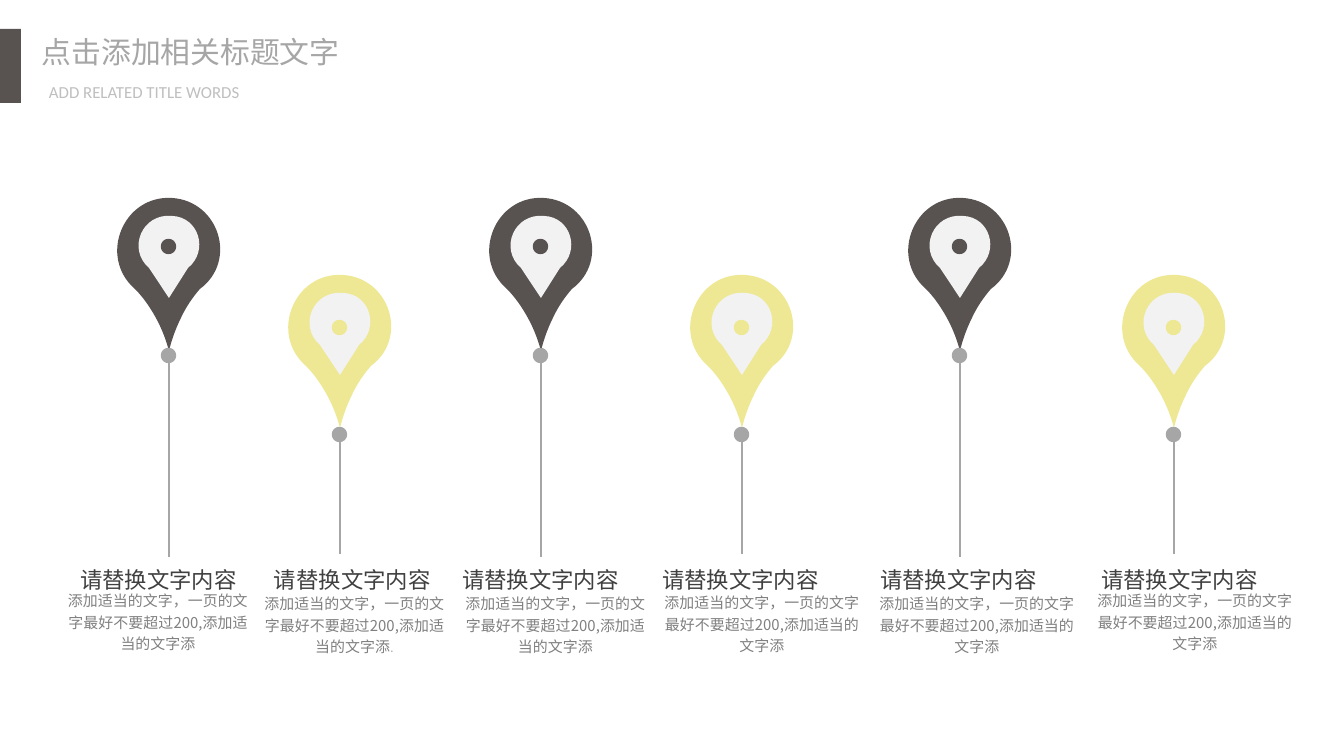
from lxml.etree import SubElement
from pptx import Presentation
from pptx.dml.color import RGBColor
from pptx.enum.shapes import MSO_CONNECTOR, MSO_SHAPE
from pptx.enum.text import MSO_ANCHOR, MSO_AUTO_SIZE, PP_ALIGN
from pptx.oxml.ns import qn
from pptx.util import Pt

SCALE = 914400 / 134.4
COLORS = {
    "dark": "585251", "yellow": "EEE895", "inner": "F2F2F2", "gray": "A6A6A6",
    "subtitle": "BFBFBF", "heading": "404040", "body": "808080",
}
CJK = "Noto Sans CJK SC"
HEADING = "请替换文字内容"
BODY = "添加适当的文字，一页的文字最好不要超过200,添加适当的文字添"

# Outlines: width, height, then a start point followed by segments of
# three points (curve) or one point (line), relative to the top left.
PIN = (102, 153, [
    [(17, 91)],
    [(-20, 59), (5, -3), (54, 0)],
    [(101, 3), (120, 63), (82, 91)],
    [(75, 99), (68, 109), (63, 120)],
    [(58, 130), (54, 141), (51, 153)],
    [(48, 141), (43, 129), (38, 120)],
    [(32, 109), (25, 99), (17, 91)],
])
PIN_CENTER = (61, 82, [
    [(50, 52)],
    [(71, 35), (61, 1), (34, 0)],
    [(4, -3), (-11, 33), (11, 52)],
    [(31, 82)],
    [(50, 52)],
])
DOT = (15, 15, [
    [(13, 2)],
    [(16, 5), (16, 10), (13, 13)],
    [(10, 16), (5, 16), (2, 13)],
    [(-1, 10), (-1, 5), (2, 2)],
    [(5, -1), (10, -1), (13, 2)],
])
# colour, pin top, inner dot top, anchor dot top, stem end
HIGH = ("dark", 198, 239, 348, 557)
LOW = ("yellow", 275, 320, 427, 554)
# centre x, heading left, heading alignment, body box (left, top, width)
COLUMNS = [
    (169, 80, PP_ALIGN.LEFT, (62, 588, 192)),
    (340, 274, PP_ALIGN.LEFT, (259, 591, 191)),
    (541, 461, PP_ALIGN.CENTER, (460, 591, 191)),
    (742, 661, PP_ALIGN.CENTER, (661, 590, 202)),
    (960, 879, PP_ALIGN.CENTER, (879, 591, 196)),
    (1174, 1100, PP_ALIGN.CENTER, (1094, 588, 202)),
]


def px(n):
    return round(n * SCALE)


def rgb(name):
    return RGBColor.from_string(COLORS[name])


def add_run(p, text, size, color, font=CJK):
    r = p.add_run()
    r.text = text
    r.font.size = Pt(size)
    r.font.name = font
    r.font.color.rgb = rgb(color)
    SubElement(r.font._element, qn("a:ea"), typeface=font)


class Deck:
    def __init__(self, prs):
        self.s = prs.slides.add_slide(prs.slide_layouts[6])

    def paint(self, sp, color):
        sp.shadow.inherit = False
        sp.fill.solid()
        sp.fill.fore_color.rgb = rgb(color)
        sp.line.fill.background()

    def rect(self, x, y, w, h, color):
        sp = self.s.shapes.add_shape(MSO_SHAPE.RECTANGLE, px(x), px(y), px(w), px(h))
        self.paint(sp, color)

    def outline(self, outline, x, y, color):
        """Draw a closed outline of curves and lines in a box at x, y."""
        w, h, segments = outline
        fb = self.s.shapes.build_freeform(px(x), px(y))
        fb.add_line_segments([(px(x + w), px(y)), (px(x + w), px(y + h)), (px(x), px(y + h))])
        sp = fb.convert_to_shape()
        path = next(sp._element.iter(qn("a:path")))
        for child in list(path):
            path.remove(child)
        for i, points in enumerate(segments):
            tag = "a:moveTo" if i == 0 else "a:cubicBezTo" if len(points) == 3 else "a:lnTo"
            node = SubElement(path, qn(tag))
            for dx, dy in points:
                SubElement(node, qn("a:pt"), x=str(px(dx)), y=str(px(dy)))
        SubElement(path, qn("a:close"))
        self.paint(sp, color)

    def line(self, x1, y1, x2, y2, color):
        sp = self.s.shapes.add_connector(MSO_CONNECTOR.STRAIGHT, px(x1), px(y1), px(x2), px(y2))
        sp.line.color.rgb = rgb(color)
        sp.line.width = Pt(1)
        SubElement(sp._element.spPr, qn("a:effectLst"))

    def text(self, text, x, y, w, h, size, color, font=CJK, align=PP_ALIGN.LEFT,
             anchor=MSO_ANCHOR.MIDDLE, wrap=True, spacing=1.2, inset=(0, 0)):
        tf = self.s.shapes.add_textbox(px(x), px(y), px(w), px(h)).text_frame
        tf.word_wrap = wrap
        tf.auto_size = MSO_AUTO_SIZE.SHAPE_TO_FIT_TEXT
        tf.vertical_anchor = anchor
        tf.margin_left = tf.margin_right = px(inset[0])
        tf.margin_top = tf.margin_bottom = px(inset[1])
        p = tf.paragraphs[0]
        p.alignment = align
        p.line_spacing = spacing
        add_run(p, text, size, color, font)
        return p

    def pin(self, cx, color, top, inner_dot, anchor_dot, stem_end):
        self.line(cx, stem_end, cx, anchor_dot + 14, "gray")
        self.outline(PIN, cx - 51, top, color)
        self.outline(PIN_CENTER, cx - 31, top + 18, "inner")
        self.outline(DOT, cx - 8, anchor_dot, "gray")
        self.outline(DOT, cx - 8, inner_dot, color)


def main():
    prs = Presentation()
    prs.slide_width, prs.slide_height = px(1344), px(756)
    deck = Deck(prs)

    deck.rect(0, 29, 21, 74, "dark")
    header = dict(anchor=MSO_ANCHOR.TOP, spacing=1.0, inset=(10, 5))
    deck.text("点击添加相关标题文字", 32, 29, 323, 47, 16, "gray", wrap=False, **header)
    deck.text("ADD RELATED TITLE WORDS", 39, 77, 300, 31, 9, "subtitle", font="Calibri",
              align=PP_ALIGN.JUSTIFY, **header)

    for i, (cx, heading_x, align, (x, y, w)) in enumerate(COLUMNS):
        deck.pin(cx, *(LOW if i % 2 else HIGH))
        deck.text(HEADING, heading_x, 561, 159, 32, 12, "heading", font="Arial",
                  align=align, wrap=False)
        p = deck.text(BODY, x, y, w, 65, 8, "body", align=PP_ALIGN.CENTER)
        if i == 1:
            add_run(p, ".", 7, "gray", "Arial")

    prs.save("out.pptx")


if __name__ == "__main__":
    main()
